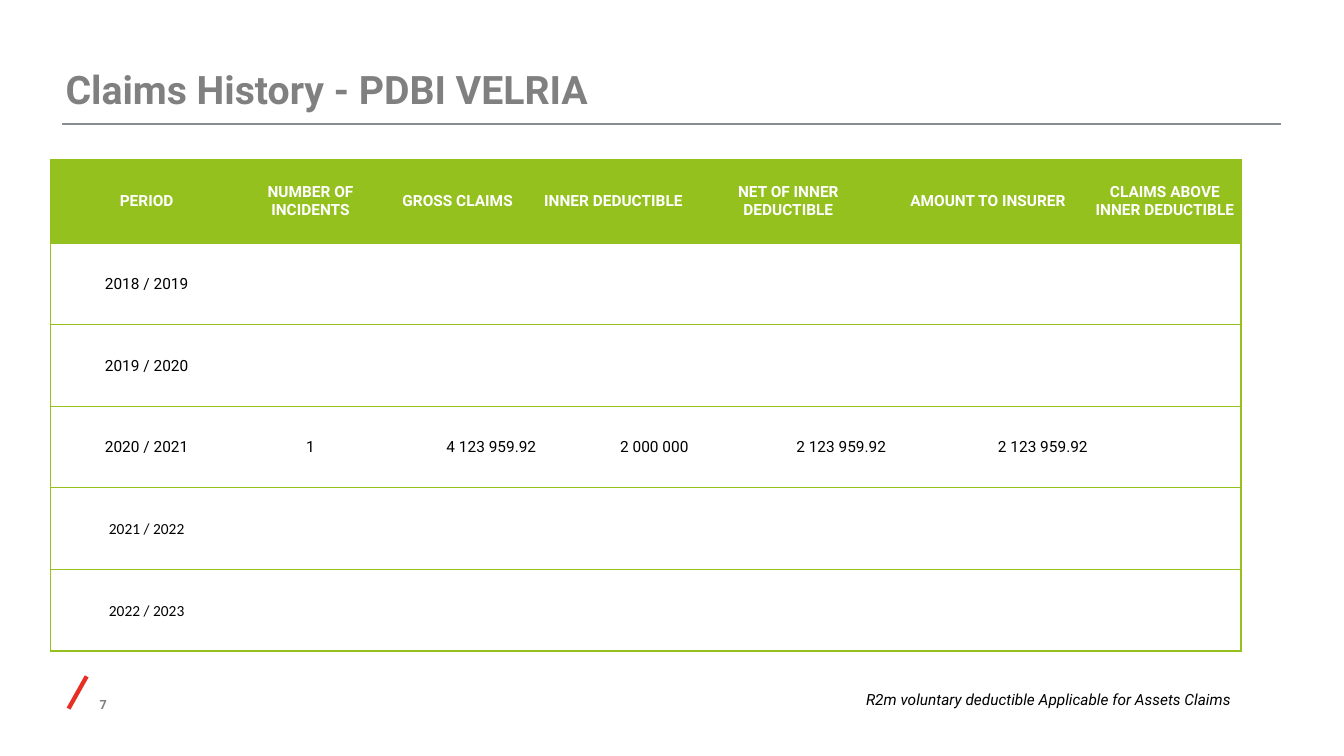
from dataclasses import dataclass

from lxml import etree
from pptx import Presentation
from pptx.dml.color import RGBColor
from pptx.enum.shapes import MSO_CONNECTOR
from pptx.enum.text import MSO_ANCHOR, MSO_AUTO_SIZE, PP_ALIGN
from pptx.oxml.ns import qn
from pptx.util import Inches, Pt

LEFT, CENTER, RIGHT = PP_ALIGN.LEFT, PP_ALIGN.CENTER, PP_ALIGN.RIGHT
TOP, MIDDLE, BOTTOM = MSO_ANCHOR.TOP, MSO_ANCHOR.MIDDLE, MSO_ANCHOR.BOTTOM
NO_AUTOSIZE = MSO_AUTO_SIZE.NONE
STRAIGHT = MSO_CONNECTOR.STRAIGHT
TITLE_ONLY = 5


@dataclass(frozen=True)
class Theme:
    font: str = "Roboto"
    late_font: str = "Calibri"
    green: str = "95C11F"
    grey: str = "808080"
    rule: str = "8B8E91"
    red: str = "E73023"
    white: str = "FFFFFF"
    black: str = "000000"
    title_size: float = 28
    body_size: float = 11
    number_size: float = 9


THEME = Theme()

HEADINGS = ["PERIOD", "NUMBER OF INCIDENTS", "GROSS CLAIMS", "INNER DEDUCTIBLE",
            "NET OF INNER DEDUCTIBLE", "AMOUNT TO INSURER",
            "CLAIMS ABOVE INNER DEDUCTIBLE"]
CLAIMS = {
    "2018 / 2019": [],
    "2019 / 2020": [],
    "2020 / 2021": ["1", "4 123 959.92", "2 000 000", "2 123 959.92", "2 123 959.92"],
    "2021 / 2022": [],
    "2022 / 2023": [],
}
LATE_PERIODS = ("2021 / 2022", "2022 / 2023")
COLUMN_WIDTHS = [1.91, 1.34, 1.58, 1.51, 1.96, 2, 1.51]
HEADER_HEIGHT = 0.83


def write(frame, text, *, size=THEME.body_size, color=THEME.black, font=THEME.font,
          bold=False, italic=False, align=LEFT, line_spacing=None):
    frame.word_wrap = True
    paragraph = frame.paragraphs[0]
    paragraph.alignment = align
    paragraph.line_spacing = line_spacing
    run = paragraph.add_run()
    run.text = text
    run.font.name = font
    run.font.size = Pt(size)
    run.font.bold = bold
    run.font.italic = italic
    run.font.color.rgb = RGBColor.from_string(color)


def set_frame(frame, anchor, insets):
    frame.auto_size = NO_AUTOSIZE
    frame.vertical_anchor = anchor
    (frame.margin_left, frame.margin_top,
     frame.margin_right, frame.margin_bottom) = map(Inches, insets)


def add_rule(slide, start, end, color, width):
    rule = slide.shapes.add_connector(STRAIGHT, *map(Inches, start + end))
    rule.line.color.rgb = RGBColor.from_string(color)
    rule.line.width = Pt(width)
    etree.SubElement(rule._element.spPr, qn("a:effectLst"))


def set_borders(cell, visible_sides):
    properties = cell._tc.get_or_add_tcPr()
    for position, side in enumerate("LRTB"):
        border = etree.Element(qn(f"a:ln{side}"), w=str(Pt(1)))
        if side in visible_sides:
            fill = etree.SubElement(border, qn("a:solidFill"))
            etree.SubElement(fill, qn("a:srgbClr"), val=THEME.green)
        else:
            etree.SubElement(border, qn("a:noFill"))
        properties.insert(position, border)


def add_heading(slide, left, top, width, height):
    title = slide.shapes.title
    title.left, title.top, title.width, title.height = map(
        Inches, (left, top, width, height))
    set_frame(title.text_frame, BOTTOM, (0, 0, 0, 0))
    write(title.text_frame, "Claims History - PDBI VELRIA",
          size=THEME.title_size, color=THEME.grey, bold=True)
    # Rule under the title
    rule_left, rule_top = left - 0.03, top + height + 0.12
    add_rule(slide, (rule_left, rule_top), (rule_left + 12.09, rule_top), THEME.rule, 1.65)


def add_claims_table(slide, left, top, width, height):
    rows = [HEADINGS] + [[period, *values] for period, values in CLAIMS.items()]
    table = slide.shapes.add_table(
        len(rows), len(HEADINGS), *map(Inches, (left, top, width, height))).table
    table.first_row = table.horz_banding = False
    for column, column_width in zip(table.columns, COLUMN_WIDTHS):
        column.width = Inches(column_width)
    row_height = (height - HEADER_HEIGHT) / len(CLAIMS)
    last = len(HEADINGS) - 1

    for r, texts in enumerate(rows):
        is_header = r == 0
        table.rows[r].height = Inches(HEADER_HEIGHT if is_header else row_height)
        font = THEME.late_font if texts[0] in LATE_PERIODS else THEME.font
        for c in range(len(HEADINGS)):
            cell = table.cell(r, c)
            cell.fill.solid()
            cell.fill.fore_color.rgb = RGBColor.from_string(
                THEME.green if is_header else THEME.white)
            set_borders(cell, "TB" + {0: "L", last: "R"}.get(c, ""))
            cell.vertical_anchor = MIDDLE
            cell.margin_left = cell.margin_right = Inches(0.05 if is_header else 0.01)
            cell.margin_top = Inches(0.01)
            cell.margin_bottom = 0
            if c < len(texts):
                write(cell.text_frame, texts[c], font=font, bold=is_header,
                      color=THEME.white if is_header else THEME.black,
                      align=CENTER if is_header or c < 2 else RIGHT)


def add_footer(slide, left, top, width, height):
    # Red slash and page number
    add_rule(slide, (left + 0.19, top + height), (left + 0.37, top), THEME.red, 3.05)
    number = slide.shapes.add_textbox(
        *map(Inches, (left, top + 0.17, 0.57, 0.23))).text_frame
    set_frame(number, BOTTOM, (0, 0, 0, 0.05))
    write(number, "7", size=THEME.number_size, color=THEME.grey, bold=True, align=RIGHT)

    # Deductible note, aligned to the right edge
    note_width = 9
    note = slide.shapes.add_textbox(
        *map(Inches, (left + width - note_width, top + 0.07, note_width, 0.3))).text_frame
    set_frame(note, TOP, (0.1, 0.05, 0.1, 0.05))
    write(note, "R2m voluntary deductible Applicable for Assets Claims",
          italic=True, align=RIGHT, line_spacing=1.1)


def main():
    deck = Presentation()
    deck.slide_width, deck.slide_height = Inches(13.33), Inches(7.5)
    slide = deck.slides.add_slide(deck.slide_layouts[TITLE_ONLY])
    add_heading(slide, 0.65, 0.39, 10, 0.72)
    add_claims_table(slide, 0.5, 1.58, sum(COLUMN_WIDTHS), 4.88)
    add_footer(slide, 0.49, 6.71, 11.82, 0.32)
    deck.save("out.pptx")


if __name__ == "__main__":
    main()
